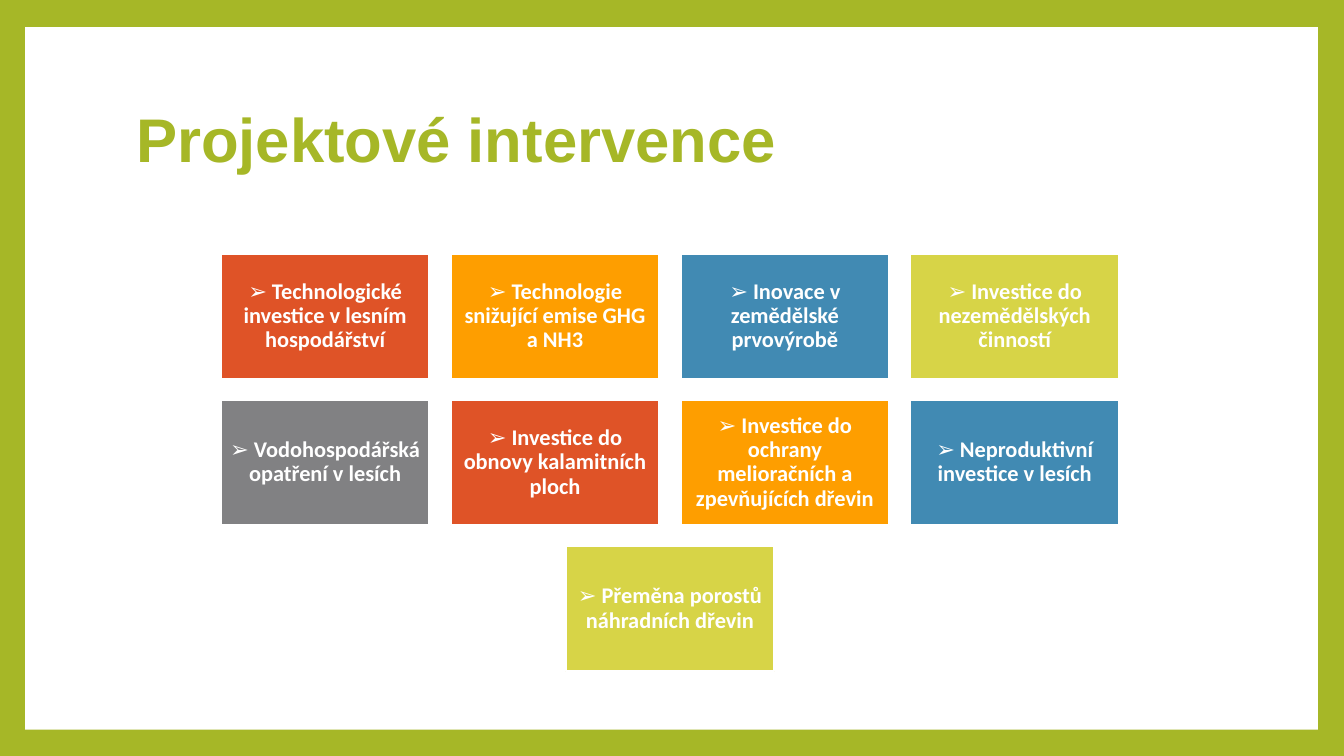
"""Build the slide that lists project interventions as a grid of cards."""
from pptx import Presentation
from pptx.dml.color import RGBColor
from pptx.enum.shapes import MSO_SHAPE
from pptx.enum.text import MSO_ANCHOR, MSO_AUTO_SIZE, PP_ALIGN
from pptx.util import Inches, Pt

RECTANGLE = MSO_SHAPE.RECTANGLE
MIDDLE = MSO_ANCHOR.MIDDLE
NO_AUTOFIT = MSO_AUTO_SIZE.NONE
LEFT, CENTER = PP_ALIGN.LEFT, PP_ALIGN.CENTER

COLORS = {
    "green": "A6B727",
    "white": "FFFFFF",
    "red": "DF5327",
    "orange": "FE9E00",
    "blue": "418AB3",
    "lime": "D7D447",
    "gray": "818183",
}
TITLE_FONT = {"name": "Arial", "size": Pt(44), "bold": True}
CARD_FONT = {"name": "Calibri", "size": Pt(16), "bold": True}
TITLE_FRAME = {"vertical_anchor": MIDDLE, "word_wrap": True, "auto_size": NO_AUTOFIT}
CARD_FRAME = {
    "vertical_anchor": MIDDLE,
    "word_wrap": True,
    "margin_left": Inches(0.07),
    "margin_right": Inches(0.07),
    "margin_top": Inches(0.07),
    "margin_bottom": Inches(0.07),
}

CARD_WIDTH, CARD_HEIGHT = 2.07, 1.24
COLUMN_STEP, ROW_STEP = 2.28, 1.45
GRID_CENTER, GRID_TOP = 6.645, 2.52
INTERVENTION_ROWS = [
    [
        ("Technologické investice v lesním hospodářství", "red"),
        ("Technologie snižující emise GHG a NH3", "orange"),
        ("Inovace v zemědělské prvovýrobě", "blue"),
        ("Investice do nezemědělských činností", "lime"),
    ],
    [
        ("Vodohospodářská opatření v lesích", "gray"),
        ("Investice do obnovy kalamitních ploch", "red"),
        ("Investice do ochrany melioračních a zpevňujících dřevin", "orange"),
        ("Neproduktivní investice v lesích", "blue"),
    ],
    [("Přeměna porostů náhradních dřevin", "lime")],
]


def rgb(color):
    """Return the named palette colour."""
    return RGBColor.from_string(COLORS[color])


def apply_format(target, values):
    """Set every attribute in values on target."""
    for attribute, value in values.items():
        setattr(target, attribute, value)


def write_text(frame, text, frame_format, font_format, color, alignment):
    """Fill a text frame with one formatted paragraph."""
    apply_format(frame, frame_format)
    frame.text = text
    paragraph = frame.paragraphs[0]
    apply_format(paragraph, {"alignment": alignment, "line_spacing": 0.9})
    font = paragraph.runs[0].font
    apply_format(font, font_format)
    font.color.rgb = rgb(color)


def add_rectangle(slide, left, top, width, height, color):
    """Add a flat filled rectangle without an outline."""
    rectangle = slide.shapes.add_shape(
        RECTANGLE, Inches(left), Inches(top), Inches(width), Inches(height)
    )
    rectangle.shadow.inherit = False
    rectangle.fill.solid()
    rectangle.fill.fore_color.rgb = rgb(color)
    rectangle.line.fill.background()
    return rectangle


def add_frame(slide):
    """Put a white panel on a green background, behind everything else."""
    slide.background.fill.solid()
    slide.background.fill.fore_color.rgb = rgb("green")
    panel = add_rectangle(slide, 0.25, 0.27, 12.82, 6.97, "white")
    slide.shapes.title._element.addprevious(panel._element)


def set_title(slide, text):
    """Place and format the title placeholder."""
    title = slide.shapes.title
    apply_format(title, {
        "left": Inches(1.25),
        "top": Inches(0.67),
        "width": Inches(10.8),
        "height": Inches(1.48),
    })
    write_text(title.text_frame, text, TITLE_FRAME, TITLE_FONT, "green", LEFT)


def add_card(slide, left, top, intervention, color):
    """Add one coloured card with an arrow before its text."""
    card = add_rectangle(slide, left, top, CARD_WIDTH, CARD_HEIGHT, color)
    card.line.color.rgb = rgb("white")
    card.line.width = Pt(1.5)
    write_text(card.text_frame, f"➢ {intervention}", CARD_FRAME, CARD_FONT, "white", CENTER)


def add_card_grid(slide):
    """Add the rows of cards, each row centred on the grid."""
    for row, interventions in enumerate(INTERVENTION_ROWS):
        row_width = COLUMN_STEP * (len(interventions) - 1) + CARD_WIDTH
        row_left = GRID_CENTER - row_width / 2
        top = GRID_TOP + row * ROW_STEP
        for column, (intervention, color) in enumerate(interventions):
            add_card(slide, row_left + column * COLUMN_STEP, top, intervention, color)


def main():
    """Build and save the presentation."""
    presentation = Presentation()
    presentation.slide_width = Inches(13.33)
    presentation.slide_height = Inches(7.5)
    slide = presentation.slides.add_slide(presentation.slide_layouts[5])
    add_frame(slide)
    set_title(slide, "Projektové intervence")
    add_card_grid(slide)
    presentation.save("out.pptx")


if __name__ == "__main__":
    main()
